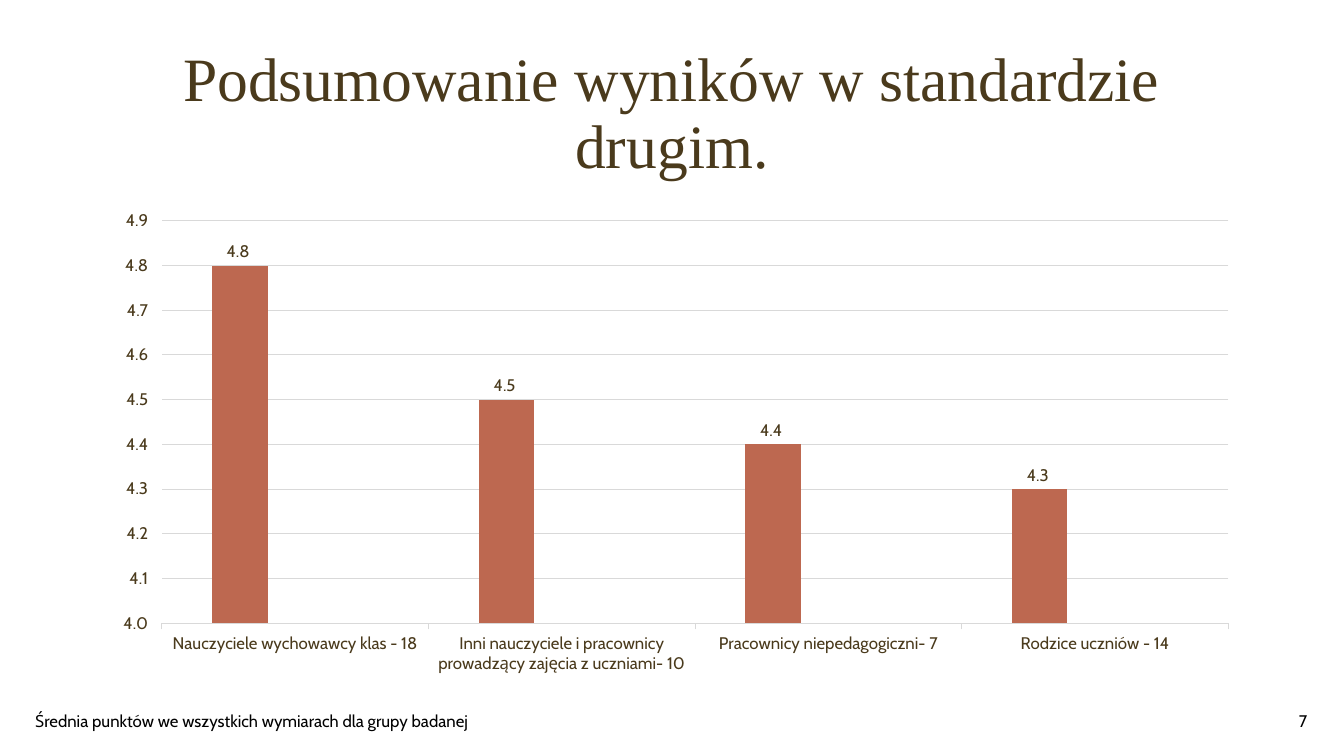
import pptx
import pptx.util
import pptx.chart.data
import pptx.dml.color
import pptx.enum.chart
import pptx.enum.text
import pptx.oxml

Pt = pptx.util.Pt
ALIGN = pptx.enum.text.PP_ALIGN
BROWN = "4A3A1C"
GREY = "D9D9D9"
BLACK = "000000"
FORMAT = "0.0_)"

GROUPS = [
    ("Nauczyciele wychowawcy klas - 18", 4.8),
    ("Inni nauczyciele i pracownicy prowadzący zajęcia z uczniami- 10", 4.5),
    ("Pracownicy niepedagogiczni- 7", 4.4),
    ("Rodzice uczniów - 14", 4.3),
]
SERIES_COLORS = ["BD6850", "E47D60", "EEB9AF"]


def color(code):
    return pptx.dml.color.RGBColor.from_string(code)


def style_font(font, size, code, name="Cabin"):
    font.size = Pt(size)
    font.name = name
    font.bold = False
    font.color.rgb = color(code)


def style_line(line):
    line.color.rgb = color(GREY)
    line.width = Pt(0.75)


def add_text(slide, box, text, size=12, code=BLACK, name="Cabin",
             align=ALIGN.LEFT, spacing=1):
    frame = slide.shapes.add_textbox(*map(Pt, box)).text_frame
    frame.word_wrap = True
    frame.vertical_anchor = pptx.enum.text.MSO_ANCHOR.MIDDLE
    frame.text = text
    line = frame.paragraphs[0]
    line.alignment = align
    line.line_spacing = spacing
    style_font(line.runs[0].font, size, code, name)


def place_plot(chart, x, y, width, height):
    """Fix the inner plot area, as fractions of the chart."""
    area = chart.plots._plotArea
    for old in area.xpath("c:layout"):
        area.remove(old)
    parts = "".join(f'<c:{tag} val="{val}"/>' for tag, val in [
        ("layoutTarget", "inner"), ("xMode", "edge"), ("yMode", "edge"),
        ("x", x), ("y", y), ("w", width), ("h", height)])
    area.insert(0, pptx.oxml.parse_xml(
        '<c:layout xmlns:c="http://schemas.openxmlformats.org/drawingml/2006/chart">'
        f"<c:manualLayout>{parts}</c:manualLayout></c:layout>"))


def add_columns(slide, box):
    kinds = pptx.enum.chart
    names, scores = zip(*GROUPS)
    data = pptx.chart.data.CategoryChartData(number_format=FORMAT)
    data.categories = names
    # The second and third series are empty but keep their room
    data.add_series("Series 1", scores)
    for number in (2, 3):
        data.add_series(f"Series {number}", [None] * len(names))
    chart = slide.shapes.add_chart(
        kinds.XL_CHART_TYPE.COLUMN_CLUSTERED, *map(Pt, box), data).chart
    chart.has_legend = False
    chart.has_title = False
    style_font(chart.font, 10, BLACK)
    place_plot(chart, 0.06, 0.04, 0.92, 0.836)

    # Columns and their values
    plot = chart.plots[0]
    plot.vary_by_categories = False
    plot.gap_width = 182
    plot.overlap = 0
    for series, code in zip(plot.series, SERIES_COLORS):
        series.format.fill.solid()
        series.format.fill.fore_color.rgb = color(code)
        labels = series.data_labels
        labels.show_value = True
        labels.position = kinds.XL_LABEL_POSITION.OUTSIDE_END
        labels.number_format = FORMAT
        labels.number_format_is_linked = False
        style_font(labels.font, 12, BROWN)

    # Axes
    for axis in (chart.category_axis, chart.value_axis):
        axis.major_tick_mark = kinds.XL_TICK_MARK.OUTSIDE
        style_font(axis.tick_labels.font, 12, BROWN)
    style_line(chart.category_axis.format.line)
    scale = chart.value_axis
    scale.minimum_scale = 4
    scale.maximum_scale = 4.9
    scale.major_unit = 0.1
    scale.format.line.fill.background()
    scale.tick_labels.number_format = FORMAT
    scale.tick_labels.number_format_is_linked = False
    style_line(scale.major_gridlines.format.line)


def main():
    deck = pptx.Presentation()
    deck.slide_width, deck.slide_height = Pt(960), Pt(540)
    slide = deck.slides.add_slide(deck.slide_layouts[6])

    # Title
    add_text(slide, (66, 30, 828, 104.4),
             "Podsumowanie wyników w standardzie drugim.",
             44, BROWN, "Times New Roman", ALIGN.CENTER, 0.9)

    # Chart
    add_columns(slide, (66, 144, 828, 344))

    # Footer
    add_text(slide, (18, 500.4, 324, 28.8),
             "Średnia punktów we wszystkich wymiarach dla grupy badanej")
    add_text(slide, (725, 500.4, 216, 28.8), "7", align=ALIGN.RIGHT)

    deck.save("out.pptx")


if __name__ == "__main__":
    main()
